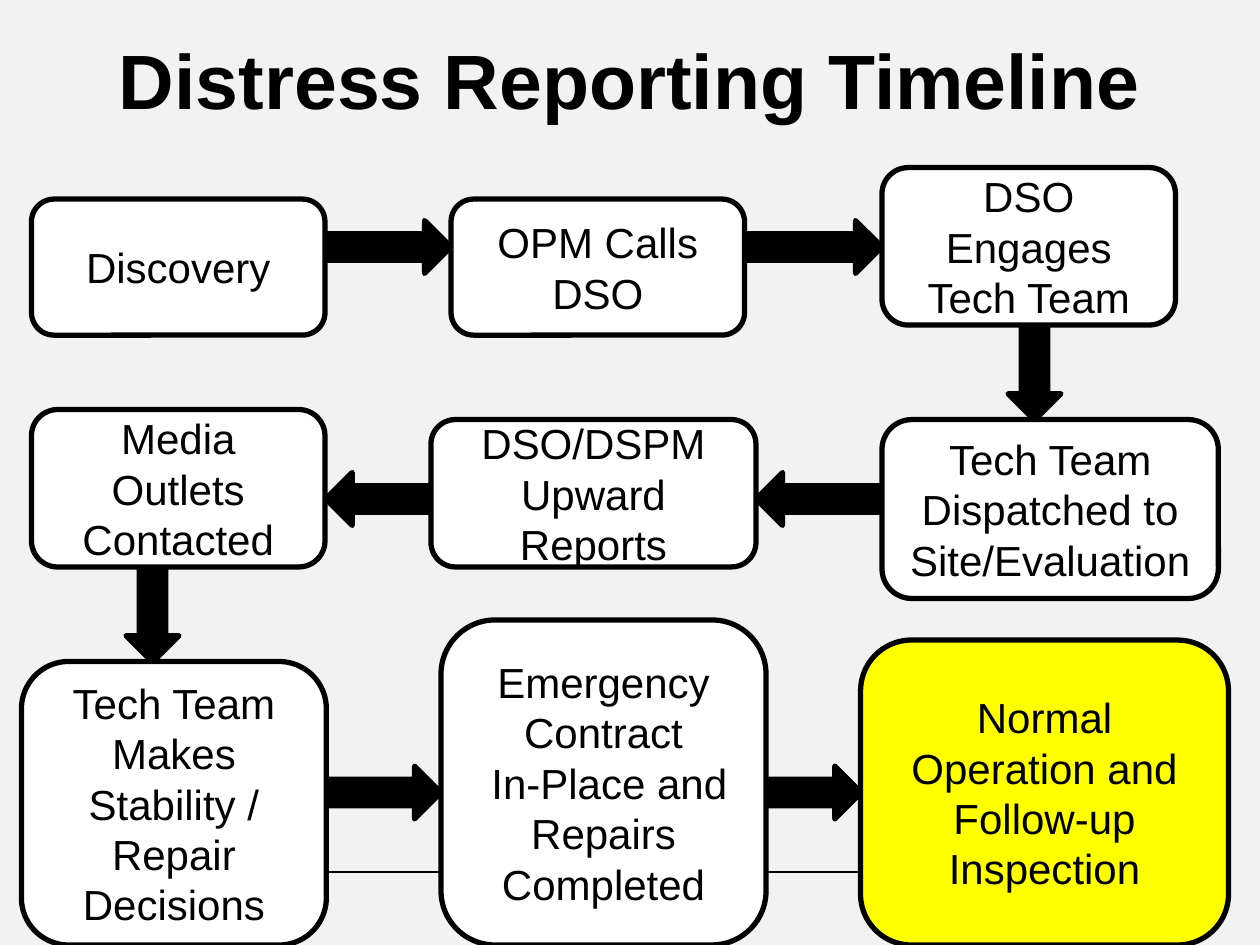
import pptx
import pptx.dml.color
import pptx.enum.shapes
import pptx.enum.text
import pptx.oxml
import pptx.util
from pptx.util import Inches

SHAPES = pptx.enum.shapes.MSO_SHAPE
BLACK, WHITE, YELLOW, GREY = "000000", "FFFFFF", "FFFF00", "F2F2F2"
ARROW_THICKNESS = 0.42

# Steps in reading order: left, top, width, height, fill, text
STEPS = [
    (0.25, 1.58, 2.33, 1.08, WHITE, "Discovery"),
    (3.58, 1.58, 2.33, 1.08, WHITE, "OPM Calls DSO"),
    (7, 1.33, 2.33, 1.25, WHITE, "DSO Engages Tech Team"),
    (7, 3.33, 2.67, 1.42, WHITE, "Tech Team Dispatched to Site/Evaluation"),
    (3.42, 3.33, 2.58, 1.17, WHITE, "DSO/DSPM Upward Reports"),
    (0.25, 3.25, 2.33, 1.25, WHITE, "Media Outlets Contacted"),
    (0.17, 5.25, 2.42, 2.25, WHITE, "Tech Team Makes Stability / Repair Decisions"),
    (3.5, 4.92, 2.58, 2.58, WHITE,
     "Emergency Contract\n In-Place and Repairs Completed"),
    (6.83, 5.08, 2.92, 2.42, YELLOW, "Normal Operation and Follow-up Inspection"),
]

# Arrows between steps: centre x, centre y, length, rotation
ARROWS = [
    (3.08, 1.96, 1, 0),
    (6.46, 1.96, 1.08, 0),
    (8.21, 2.96, 0.75, 90),
    (6.5, 3.96, 1, 180),
    (3, 3.96, 0.83, 180),
    (1.21, 4.88, 0.75, 90),
    (3.04, 6.29, 0.92, 0),
    (6.46, 6.29, 0.75, 0),
]


def color(value):
    return pptx.dml.color.RGBColor.from_string(value)


def write_text(shape, text, size, bold=False):
    frame = shape.text_frame
    frame.word_wrap = True
    frame.vertical_anchor = pptx.enum.text.MSO_ANCHOR.MIDDLE
    frame.text = text
    for para in frame.paragraphs:
        para.alignment = pptx.enum.text.PP_ALIGN.CENTER
        for span in para.runs:
            span.font.name = "Arial"
            span.font.size = pptx.util.Pt(size)
            span.font.bold = bold
            span.font.color.rgb = color(BLACK)


def add_outlined_shape(page, kind, left, top, width, height, fill):
    shape = page.shapes.add_shape(
        kind, Inches(left), Inches(top), Inches(width), Inches(height))
    shape.shadow.inherit = False
    shape.fill.solid()
    shape.fill.fore_color.rgb = color(fill)
    shape.line.color.rgb = color(BLACK)
    shape.line.width = pptx.util.Pt(3)
    return shape


def add_step(page, left, top, width, height, fill, text):
    box = add_outlined_shape(
        page, SHAPES.ROUNDED_RECTANGLE, left, top, width, height, fill)
    write_text(box, text, 24)


def add_arrow(page, center_x, center_y, length, rotation):
    arrow = add_outlined_shape(
        page, SHAPES.RIGHT_ARROW, center_x - length / 2,
        center_y - ARROW_THICKNESS / 2, length, ARROW_THICKNESS, BLACK)
    arrow.rotation = rotation


def add_rule(page, start_x, end_x, y):
    rule = page.shapes.add_connector(
        pptx.enum.shapes.MSO_CONNECTOR.STRAIGHT,
        Inches(start_x), Inches(y), Inches(end_x), Inches(y))
    rule.line.color.rgb = color(BLACK)
    rule.line.width = pptx.util.Pt(0.75)
    properties = rule.element.spPr
    properties.append(pptx.oxml.parse_xml(
        '<a:effectLst xmlns:a='
        '"http://schemas.openxmlformats.org/drawingml/2006/main"/>'))


def add_title(page, text):
    box = page.shapes.add_textbox(Inches(0.5), 0, Inches(9), Inches(1.25))
    write_text(box, text, 44, bold=True)


def main():
    deck = pptx.Presentation()
    deck.slide_width, deck.slide_height = Inches(10), Inches(7.5)
    page = deck.slides.add_slide(deck.slide_layouts[6])
    page.background.fill.solid()
    page.background.fill.fore_color.rgb = color(GREY)

    # Footer rule and heading
    add_rule(page, 8.58, 0.42, 6.92)
    add_title(page, "Distress Reporting Timeline")

    # Flow of steps, boxes over arrows
    for arrow in ARROWS:
        add_arrow(page, *arrow)
    for step in STEPS:
        add_step(page, *step)

    deck.save("out.pptx")


if __name__ == "__main__":
    main()
